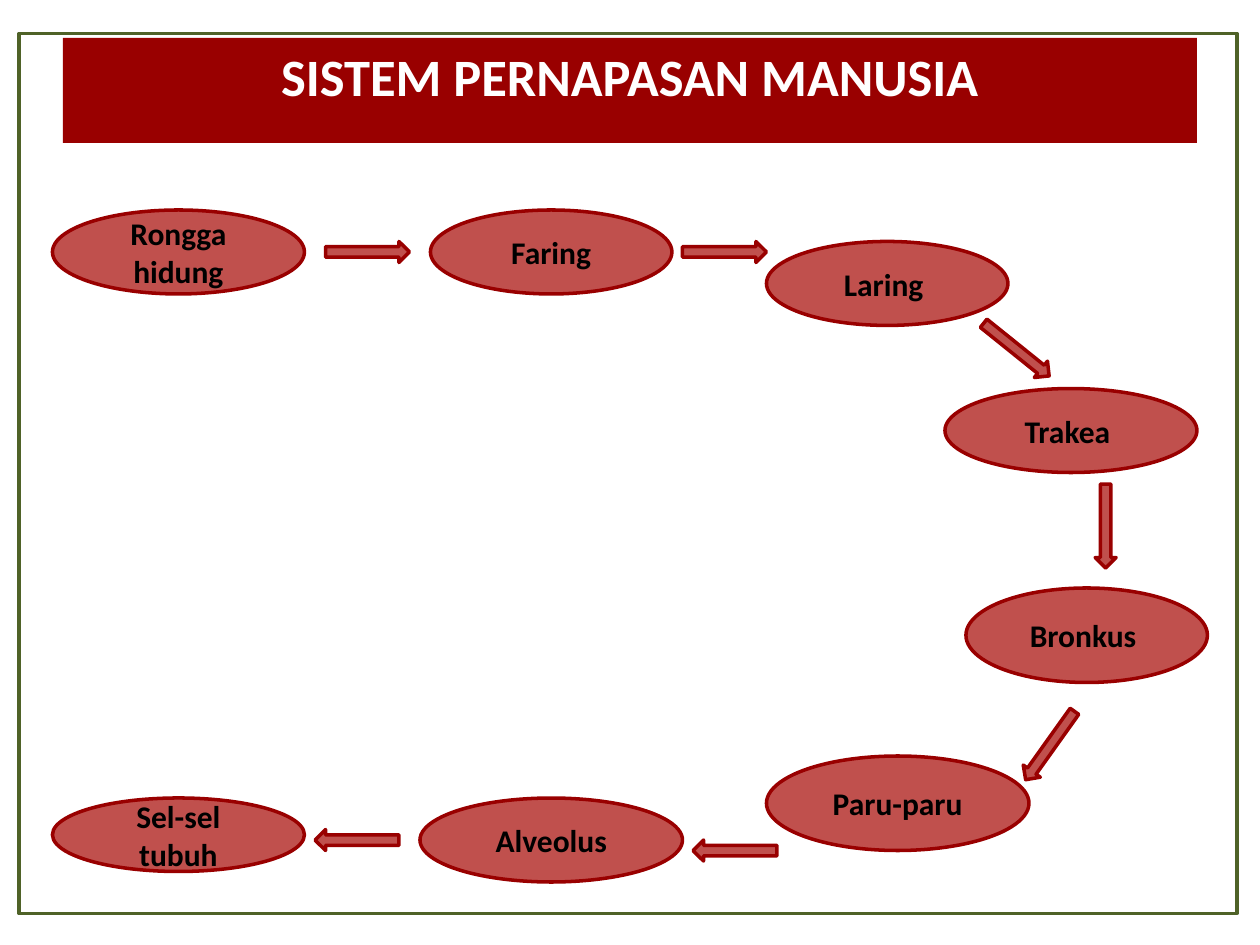
from dataclasses import dataclass

from pptx import Presentation
from pptx import util as u
from pptx.dml.color import RGBColor
from pptx.enum import shapes, text

PX = u.Inches(1) // 120
GREEN, MAROON, RED = "4F6228", "990000", "C0504D"
BLACK, WHITE = "000000", "FFFFFF"
ARROW_SIZE = (80, 20)
KIND = shapes.MSO_SHAPE


@dataclass
class Organ:
    name: str
    left: int
    top: int
    width: int
    height: int


@dataclass
class Arrow:
    left: int
    top: int
    angle: float = 0


ORGANS = [
    Organ("Rongga hidung", 50, 200, 240, 80),
    Organ("Faring", 410, 200, 230, 80),
    Organ("Laring ", 730, 230, 230, 80),
    Organ("Trakea ", 900, 370, 240, 80),
    Organ("Bronkus ", 920, 560, 230, 90),
    Organ("Paru-paru", 730, 720, 250, 90),
    Organ("Alveolus", 400, 760, 250, 80),
    Organ("Sel-sel tubuh", 50, 760, 240, 70),
]
ARROWS = [
    Arrow(310, 230),
    Arrow(650, 230),
    Arrow(928, 323, 38.8),
    Arrow(1013, 491, 90),
    Arrow(960, 700, 125.5),
    Arrow(660, 800, 180),
    Arrow(300, 790, 180),
]


def rgb(colour: str) -> RGBColor:
    return RGBColor.from_string(colour)


def apply(target, values: dict) -> None:
    for key, value in values.items():
        setattr(target, key, value)


def add_block(page, kind, left: int, top: int, width: int, height: int,
              fill: str | None, line: str | None):
    block = page.shapes.add_shape(kind, *(n * PX for n in (left, top, width, height)))
    block.shadow.inherit = False
    if fill:
        block.fill.solid()
        block.fill.fore_color.rgb = rgb(fill)
    else:
        block.fill.background()
    if line:
        block.line.color.rgb = rgb(line)
        block.line.width = u.Pt(2)
    else:
        block.line.fill.background()
    return block


def write(block, words: str, size: int, colour: str, anchor) -> None:
    apply(block.text_frame, {"word_wrap": True, "vertical_anchor": anchor})
    para = block.text_frame.paragraphs[0]
    para.alignment = text.PP_ALIGN.CENTER
    span = para.add_run()
    span.text = words
    apply(span.font, {"name": "Calibri", "size": u.Pt(size), "bold": True})
    span.font.color.rgb = rgb(colour)


def add_organ(page, organ: Organ) -> None:
    oval = add_block(page, KIND.OVAL, organ.left, organ.top,
                     organ.width, organ.height, RED, MAROON)
    write(oval, organ.name, 18, BLACK, text.MSO_ANCHOR.MIDDLE)


def add_arrow(page, arrow: Arrow) -> None:
    block = add_block(page, KIND.RIGHT_ARROW, arrow.left, arrow.top,
                      *ARROW_SIZE, RED, MAROON)
    block.rotation = arrow.angle


def main() -> None:
    deck = Presentation()
    apply(deck, {"slide_width": 1200 * PX, "slide_height": 900 * PX})
    page = deck.slides.add_slide(deck.slide_layouts[6])
    add_block(page, KIND.RECTANGLE, 18, 32, 1160, 838, None, GREEN)
    for organ in ORGANS:
        add_organ(page, organ)
    for arrow in ARROWS:
        add_arrow(page, arrow)
    title = add_block(page, KIND.RECTANGLE, 60, 36, 1080, 100, MAROON, None)
    write(title, "SISTEM PERNAPASAN MANUSIA", 30, WHITE, text.MSO_ANCHOR.TOP)
    deck.save("out.pptx")


if __name__ == "__main__":
    main()
